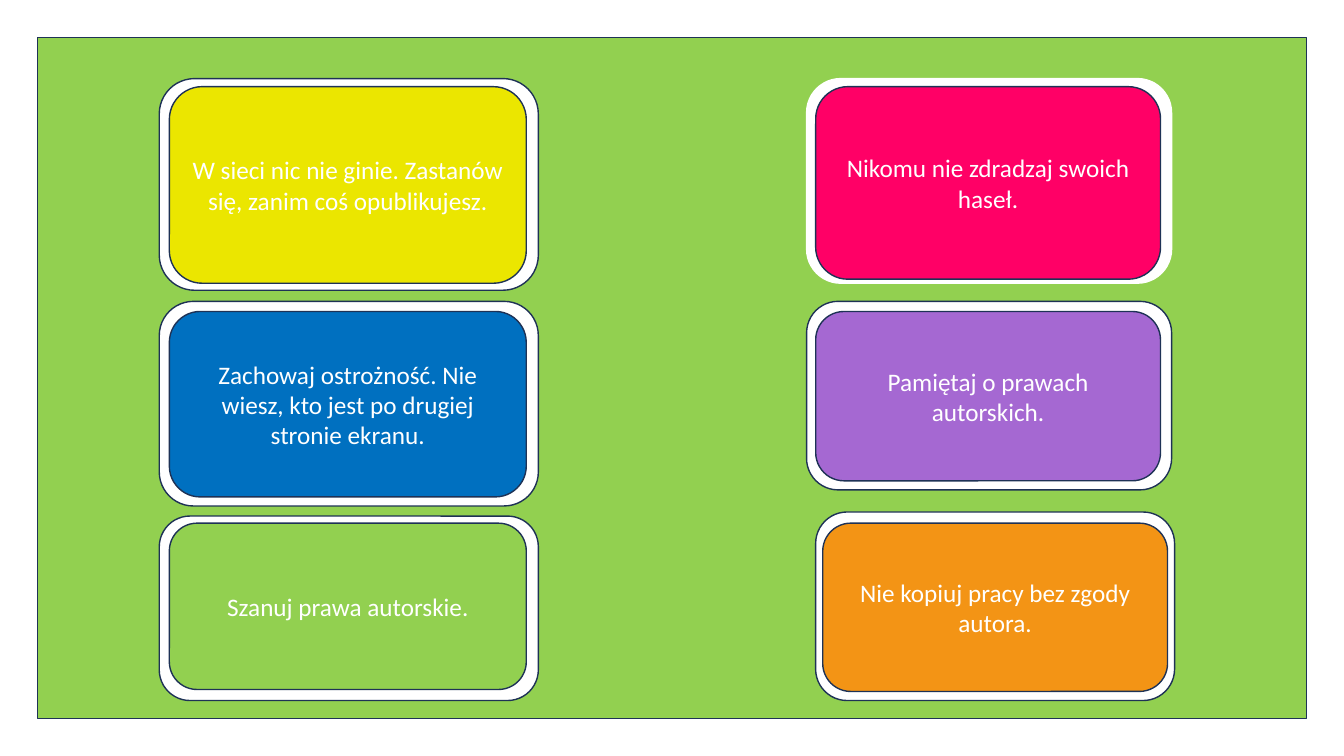
from dataclasses import dataclass

from pptx import Presentation
from pptx import util as u
from pptx.dml.color import RGBColor
from pptx.enum import shapes, text


@dataclass(frozen=True)
class Theme:
    font: str = "Calibri"
    size: int = 18
    border: float = 1
    white: str = "FFFFFF"
    outline: str = "1E3256"
    green: str = "92D050"
    yellow: str = "EBE600"
    blue: str = "0070C0"
    pink: str = "FF0066"
    purple: str = "A568D2"
    orange: str = "F39415"


@dataclass(frozen=True)
class Box:
    left: float
    top: float
    width: float
    height: float

    def inset(self, left, top, right, bottom):
        return Box(self.left + left, self.top + top,
                   self.width - left - right, self.height - top - bottom)


@dataclass(frozen=True)
class Rule:
    message: str
    color: str
    top: float
    height: float
    above: float
    below: float
    border: str = Theme.outline


THEME = Theme()
PAGE = Box(0, 0, 13.33, 7.5)
MARGIN = 0.37
ROUNDED = shapes.MSO_SHAPE.ROUNDED_RECTANGLE

LEFT_RULES = [
    Rule("W sieci nic nie ginie. Zastanów się, zanim coś opublikujesz.",
         THEME.yellow, 0.78, 2.1, 0.08, 0.07),
    Rule("Zachowaj ostrożność. Nie wiesz, kto jest po drugiej stronie ekranu.",
         THEME.blue, 2.99, 2.03, 0.1, 0.09),
    Rule("Szanuj prawa autorskie.", THEME.green, 5.12, 1.83, 0.07, 0.11),
]
RIGHT_RULES = [
    Rule("Nikomu nie zdradzaj swoich haseł.",
         THEME.pink, 0.78, 2.03, 0.08, 0.04, THEME.white),
    Rule("Pamiętaj o prawach autorskich.", THEME.purple, 2.99, 1.87, 0.1, 0.09),
]
LAST_RULES = [
    Rule("Nie kopiuj pracy bez zgody autora.",
         THEME.orange, 5.08, 1.87, 0.11, 0.09),
]
COLUMNS = [
    (1.58, 3.76, 0.1, 0.12, LEFT_RULES),
    (8, 3.62, 0.09, 0.11, RIGHT_RULES),
    (8.09, 3.56, 0.07, 0.07, LAST_RULES),
]


def add_panel(page, box, kind, fill, border):
    panel = page.shapes.add_shape(
        kind, u.Inches(box.left), u.Inches(box.top),
        u.Inches(box.width), u.Inches(box.height))
    panel.shadow.inherit = False
    panel.fill.solid()
    panel.fill.fore_color.rgb = RGBColor.from_string(fill)
    panel.line.color.rgb = RGBColor.from_string(border)
    panel.line.width = u.Pt(THEME.border)
    return panel


def add_message(panel, message):
    frame = panel.text_frame
    frame.word_wrap = True
    frame.vertical_anchor = text.MSO_ANCHOR.MIDDLE
    para = frame.paragraphs[0]
    para.alignment = text.PP_ALIGN.CENTER
    span = para.add_run()
    span.text = message
    span.font.name = THEME.font
    span.font.size = u.Pt(THEME.size)
    span.font.color.rgb = RGBColor.from_string(THEME.white)


def add_card(page, box, rule, before, after):
    add_panel(page, box, ROUNDED, THEME.white, rule.border)
    inner = box.inset(before, rule.above, after, rule.below)
    card = add_panel(page, inner, ROUNDED, rule.color, THEME.outline)
    add_message(card, rule.message)


def add_rules_page(deck, box):
    page = deck.slides.add_slide(deck.slide_layouts[6])
    board = box.inset(MARGIN, MARGIN, MARGIN, MARGIN)
    add_panel(page, board, shapes.MSO_SHAPE.RECTANGLE, THEME.green, THEME.outline)
    for left, width, before, after, rules in COLUMNS:
        for rule in rules:
            card_box = Box(box.left + left, box.top + rule.top, width, rule.height)
            add_card(page, card_box, rule, before, after)


def main():
    deck = Presentation()
    deck.slide_width = u.Inches(PAGE.width)
    deck.slide_height = u.Inches(PAGE.height)
    add_rules_page(deck, PAGE)
    deck.save("out.pptx")


if __name__ == "__main__":
    main()
